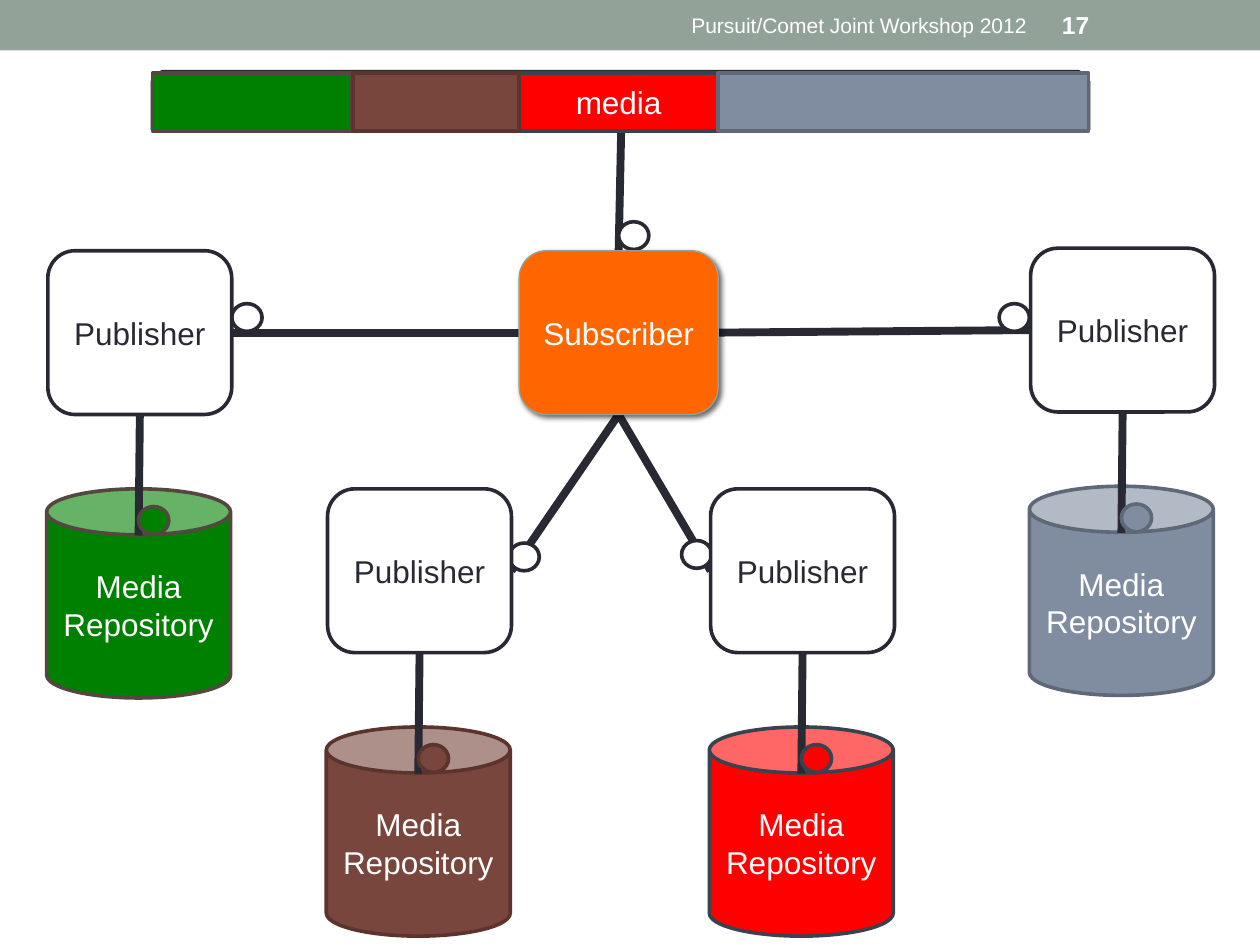
from dataclasses import dataclass

from lxml import etree
from pptx import Presentation
from pptx.dml.color import RGBColor
from pptx.enum.shapes import MSO_CONNECTOR, MSO_SHAPE
from pptx.enum.text import MSO_ANCHOR, PP_ALIGN
from pptx.oxml.ns import qn
from pptx.util import Inches, Pt

RECT, ROUND = MSO_SHAPE.RECTANGLE, MSO_SHAPE.ROUNDED_RECTANGLE
CAN, OVAL = MSO_SHAPE.CAN, MSO_SHAPE.OVAL
SNIP = MSO_SHAPE.SNIP_2_SAME_RECTANGLE
STRAIGHT = MSO_CONNECTOR.STRAIGHT
MIDDLE = MSO_ANCHOR.MIDDLE
LEFT, CENTER, RIGHT = PP_ALIGN.LEFT, PP_ALIGN.CENTER, PP_ALIGN.RIGHT


@dataclass(frozen=True)
class Theme:
    font: str = "Arial"
    body: int = 18
    footer: int = 12
    number: int = 14
    outline: float = 2.08
    thin: float = 0.75
    link: float = 4.5
    dark: str = "292934"
    white: str = "FFFFFF"
    band: str = "93A299"
    orange: str = "FF6600"
    # Each media colour is a fill with its outline
    green: tuple = ("008000", "544740")
    brown: tuple = ("79463D", "5A342D")
    red: tuple = ("FF0000", "38434E")
    slate: tuple = ("808DA0", "5F6876")


class Diagram:
    def __init__(self, slide, theme):
        self.s, self.t = slide, theme

    def set_text(self, sp, text, color, size=None, align=CENTER, bold=False):
        tf = sp.text_frame
        tf.word_wrap = True
        tf.vertical_anchor = MIDDLE
        p = tf.paragraphs[0]
        p.alignment = align
        r = p.add_run()
        r.text = text
        style = {"name": self.t.font, "size": Pt(size or self.t.body), "bold": bold}
        for name, value in style.items():
            setattr(r.font, name, value)
        r.font.color.rgb = RGBColor.from_string(color)

    def shape(self, kind, box, colors, text=None, text_color=None, width=None):
        """Draw a preset shape; colors is (fill, outline), outline may be None."""
        sp = self.s.shapes.add_shape(kind, *map(Inches, box))
        sp.shadow.inherit = False
        fill, line = colors
        sp.fill.solid()
        sp.fill.fore_color.rgb = RGBColor.from_string(fill)
        if line:
            sp.line.color.rgb = RGBColor.from_string(line)
            sp.line.width = Pt(width or self.t.outline)
        else:
            sp.line.fill.background()
        if text:
            self.set_text(sp, text, text_color or self.t.white)
        return sp

    def ball(self, x, y, colors):
        self.shape(OVAL, (x, y, 0.24, 0.22), colors)

    def label(self, box, text, **style):
        sp = self.s.shapes.add_textbox(*map(Inches, box))
        self.set_text(sp, text, self.t.white, **style)

    def link(self, start, end):
        c = self.s.shapes.add_connector(STRAIGHT, *map(Inches, start + end))
        c.line.color.rgb = RGBColor.from_string(self.t.dark)
        c.line.width = Pt(self.t.link)
        etree.SubElement(c._element.spPr, qn("a:effectLst"))

    def cast_shadow(self, sp):
        effects = sp._element.spPr.find(qn("a:effectLst"))
        shadow = etree.SubElement(
            effects, qn("a:outerShdw"), blurRad=str(Pt(3)), dist=str(Pt(2)),
            dir=str(45 * 60000), algn="ctr", rotWithShape="0")
        color = etree.SubElement(shadow, qn("a:srgbClr"), val="000000")
        etree.SubElement(color, qn("a:alpha"), val="60000")

    def branch(self, x, y, colors, start, end, ball):
        """Draw a publisher at (x, y), its repository and its subscriber link."""
        plain = (self.t.white, self.t.dark)
        self.link(start, end)
        self.ball(*ball, plain)
        self.shape(CAN, (x - 0.01, y + 1.89, 1.46, 1.66), colors, "Media Repository")
        self.link((x + 0.72, y + 2.26), (x + 0.73, y + 1.3))
        self.ball(x + 0.72, y + 2.03, colors)
        self.shape(ROUND, (x, y, 1.46, 1.3), plain, "Publisher", self.t.dark)


def main():
    prs = Presentation()
    prs.slide_width, prs.slide_height = Inches(10), Inches(7.5)
    t = Theme()
    d = Diagram(prs.slides.add_slide(prs.slide_layouts[6]), t)
    plain = (t.white, t.dark)

    d.shape(RECT, (0, 0, 10, 0.4), (t.band, None))
    d.label((3.75, 0.02, 4.5, 0.36), "Pursuit/Comet Joint Workshop 2012",
            size=t.footer, align=RIGHT)
    d.label((8.33, 0.02, 1.17, 0.36), "17", size=t.number, align=LEFT, bold=True)

    bottom = (4.91, 3.29)
    branches = [
        (5.64, 3.88, t.red, bottom, (5.64, 4.53), (5.41, 4.29)),
        (2.6, 3.88, t.brown, bottom, (4.06, 4.53), (4.04, 4.31)),
        (0.38, 1.99, t.green, (4.12, 2.64), (1.84, 2.64), (1.84, 2.41)),
        (8.18, 1.97, t.slate, (5.7, 2.64), (8.18, 2.62), (7.93, 2.41)),
    ]
    for branch in branches:
        d.branch(*branch)

    d.link((4.93, 1.04), (4.91, 1.99))
    d.ball(4.91, 1.76, plain)
    subscriber = d.shape(ROUND, (4.12, 1.99, 1.58, 1.3), (t.orange, t.band),
                         "Subscriber", width=t.thin)
    d.cast_shadow(subscriber)

    d.shape(SNIP, (1.21, 0.57, 7.43, 0.46), plain)
    segments = [
        (4.12, 1.58, t.red, "media"),
        (1.21, 1.58, t.green, None),
        (2.8, 1.32, t.brown, None),
        (5.7, 2.94, t.slate, None),
    ]
    for x, width, colors, text in segments:
        d.shape(RECT, (x, 0.58, width, 0.46), colors, text)

    prs.save("out.pptx")


if __name__ == "__main__":
    main()
